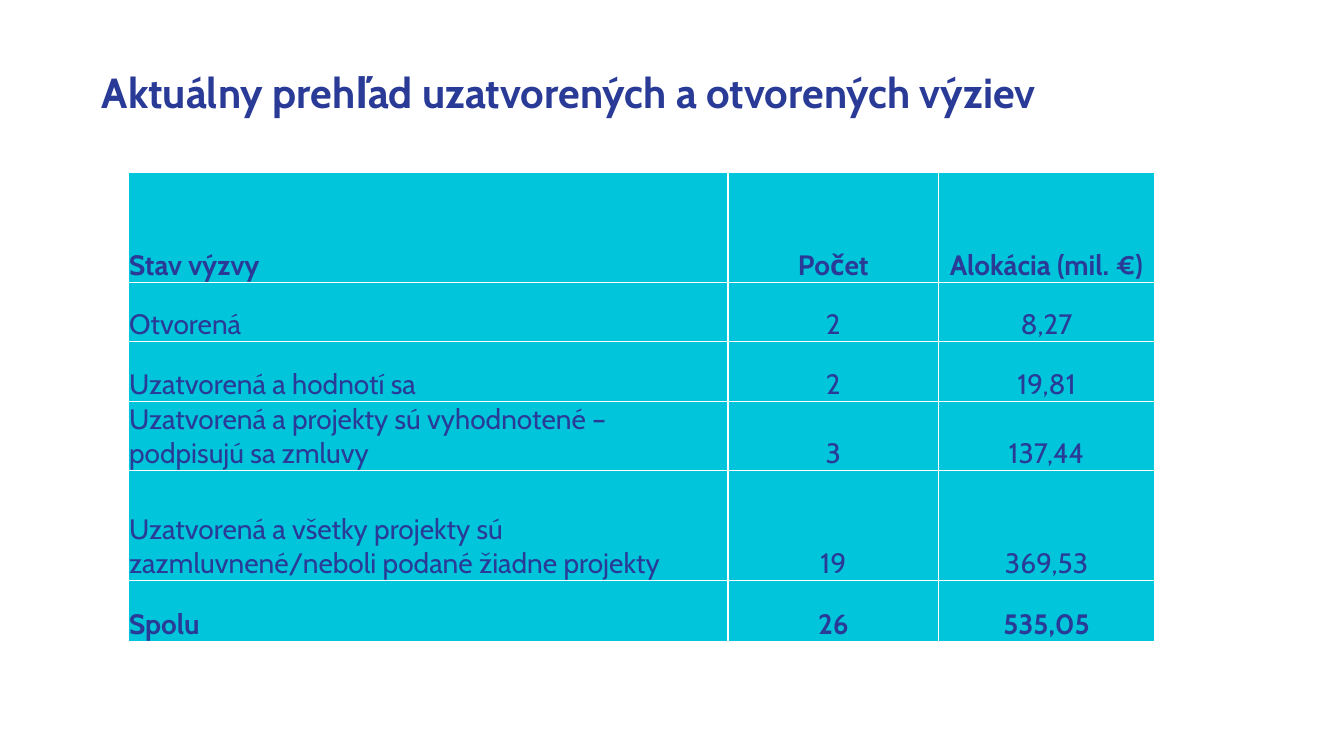
from lxml.etree import SubElement
from pptx import Presentation
from pptx.dml.color import RGBColor
from pptx.enum.text import MSO_ANCHOR, PP_ALIGN
from pptx.oxml.ns import qn
from pptx.util import Inches, Pt

TITLE = "Aktuálny prehľad uzatvorených a otvorených výziev"
CALLS = [
    ("Stav výzvy", "Počet", "Alokácia (mil. €)"),
    ("Otvorená", "2", "8,27"),
    ("Uzatvorená a hodnotí sa", "2", "19,81"),
    ("Uzatvorená a projekty sú vyhodnotené – podpisujú sa zmluvy", "3", "137,44"),
    ("Uzatvorená a všetky projekty sú zazmluvnené/neboli podané žiadne projekty", "19", "369,53"),
    ("Spolu", "26", "535,05"),
]
COLUMN_WIDTHS = [5.95, 2.09, 2.14]
ROW_HEIGHTS = [1.09, 0.59, 0.59, 0.59, 1.09, 0.61]
BOLD_ROWS = (0, len(CALLS) - 1)

FONT = "Cabin"
NAVY = RGBColor(0x29, 0x3B, 0x97)
TURQUOISE = RGBColor(0x00, 0xC5, 0xDB)
WHITE = RGBColor(0xFF, 0xFF, 0xFF)


def style_font(paragraph, size, bold):
    paragraph.font.name = FONT
    paragraph.font.size = Pt(size)
    paragraph.font.bold = bold
    paragraph.font.color.rgb = NAVY


def add_borders(cell):
    properties = cell._tc.get_or_add_tcPr()
    for side in ("a:lnL", "a:lnR", "a:lnT", "a:lnB"):
        line = SubElement(properties, qn(side), w=str(Pt(1)))
        fill = SubElement(line, qn("a:solidFill"))
        SubElement(fill, qn("a:srgbClr"), val=str(WHITE))


def format_cell(cell, text, centred, bold):
    add_borders(cell)
    cell.fill.solid()
    cell.fill.fore_color.rgb = TURQUOISE
    cell.margin_left = cell.margin_right = cell.margin_top = Inches(0.01)
    cell.margin_bottom = 0
    cell.vertical_anchor = MSO_ANCHOR.BOTTOM
    cell.text = text
    paragraph = cell.text_frame.paragraphs[0]
    paragraph.alignment = PP_ALIGN.CENTER if centred else PP_ALIGN.LEFT
    style_font(paragraph, 20, bold)


def add_title(slide):
    title = slide.shapes.title
    title.left, title.top = Inches(0.91), Inches(0.62)
    title.width, title.height = Inches(11.81), Inches(0.64)
    title.text_frame.text = TITLE
    title.text_frame.vertical_anchor = MSO_ANCHOR.MIDDLE
    paragraph = title.text_frame.paragraphs[0]
    paragraph.alignment = PP_ALIGN.LEFT
    paragraph.line_spacing = 0.9
    style_font(paragraph, 30, True)


def add_calls_table(slide):
    table = slide.shapes.add_table(
        len(CALLS), len(COLUMN_WIDTHS), Inches(1.27), Inches(1.71),
        Inches(sum(COLUMN_WIDTHS)), Inches(sum(ROW_HEIGHTS)),
    ).table
    table.horz_banding = False
    for column, width in zip(table.columns, COLUMN_WIDTHS):
        column.width = Inches(width)
    for row_index, (row, height) in enumerate(zip(table.rows, ROW_HEIGHTS)):
        row.height = Inches(height)
        for column_index, text in enumerate(CALLS[row_index]):
            format_cell(row.cells[column_index], text, column_index > 0, row_index in BOLD_ROWS)


def main():
    presentation = Presentation()
    presentation.slide_width = Inches(13.33)
    presentation.slide_height = Inches(7.5)
    slide = presentation.slides.add_slide(presentation.slide_layouts.get_by_name("Title Only"))
    add_title(slide)
    add_calls_table(slide)
    presentation.save("out.pptx")


if __name__ == "__main__":
    main()
